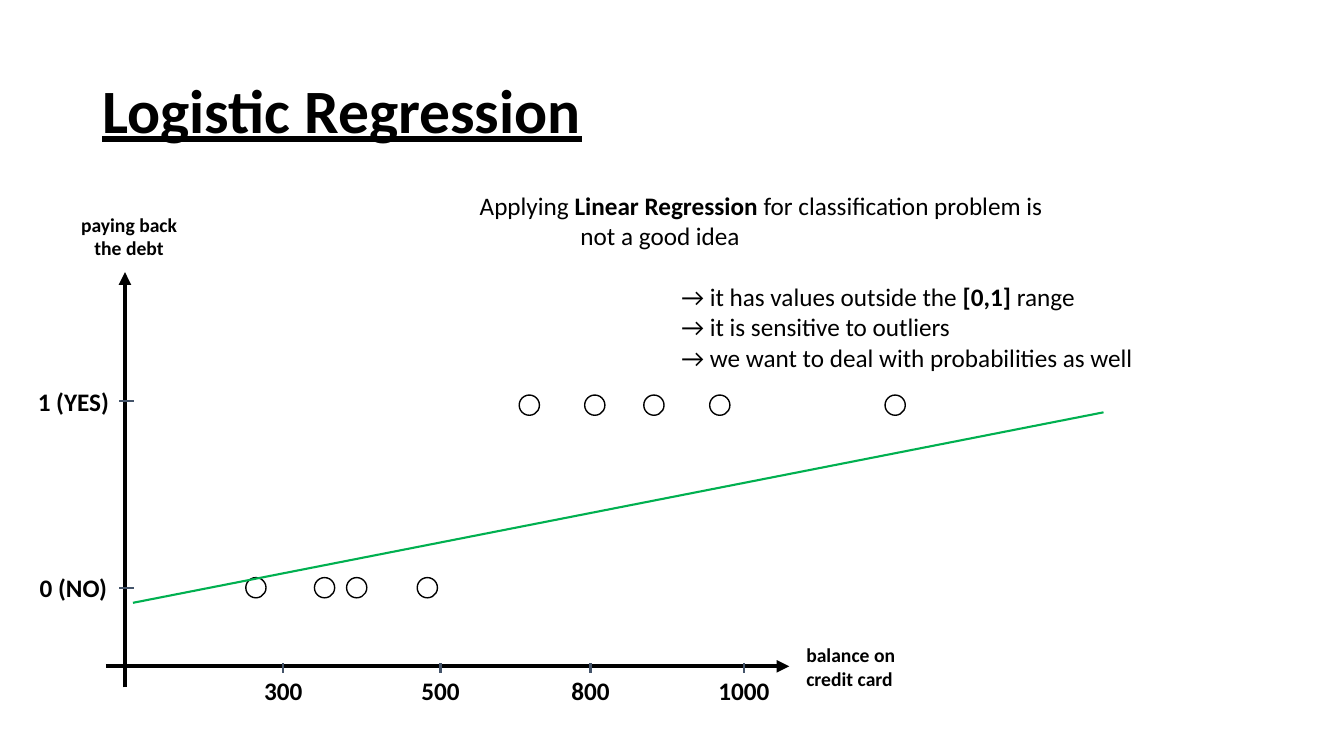
from lxml.etree import SubElement
from pptx import Presentation
from pptx.dml.color import RGBColor
from pptx.enum.shapes import MSO_CONNECTOR, MSO_SHAPE
from pptx.enum.text import MSO_ANCHOR, PP_ALIGN
from pptx.oxml.ns import qn
from pptx.util import Cm, Pt

COLORS = {"ink": "000000", "paper": "FFFFFF", "tick": "44546A", "fit": "00B050"}
FONT = "Calibri"

# All lengths are in centimetres.
TITLE = "Logistic Regression"
# Each note line: indent, space before in points, runs as (text, bold)
NOTES = [
    (0, 0, [("Applying ", False), ("Linear Regression ", True),
            ("for classification problem is", False)]),
    (2.54, 0, [("not a good idea", False)]),
    (5.08, 22, [("→ it has values outside the ", False), ("[0,1] ", True),
                ("range", False)]),
    (5.08, 0, [("→ it is sensitive to outliers", False)]),
    (5.08, 0, [("→ we want to deal with probabilities as well", False)]),
]
Y_AXIS_NAME = ["paying back", "the debt"]
X_AXIS_NAME = ["balance on", "credit card"]
Y_AXIS = (3.15, 17.32, 3.15, 6.86)
X_AXIS = (2.67, 16.79, 19.89, 16.79)
X_TICKS = [("300", 7.14), ("500", 11.1), ("800", 14.88), ("1000", 18.75)]
Y_TICKS = [("0 (NO)", 14.81), ("1 (YES)", 10.11)]
# Height of each class of points, then the centres along the balance axis
POINTS = [
    (14.81, [6.45, 8.18, 8.99, 10.77]),
    (10.21, [13.34, 14.99, 16.48, 18.14, 22.56]),
]
FIT_LINE = (3.35, 15.19, 27.81, 10.39)
POINT_SIZE = 0.51
LABEL_WIDTH, LABEL_HEIGHT = 2.34, 1.02

prs = Presentation()
prs.slide_width, prs.slide_height = Cm(33.87), Cm(19.05)
slide = prs.slides.add_slide(prs.slide_layouts[6])


def color(name):
    return RGBColor.from_string(COLORS[name])


def add_text(box, lines, size, align=PP_ALIGN.LEFT, wrap=False):
    """Add a text box; each line is (indent, space before, [(text, bold)])."""
    frame = slide.shapes.add_textbox(*map(Cm, box)).text_frame
    frame.word_wrap = wrap
    for i, (indent, before, runs) in enumerate(lines):
        paragraph = frame.add_paragraph() if i else frame.paragraphs[0]
        paragraph.alignment = align
        if indent:
            paragraph._p.get_or_add_pPr().set("marL", str(Cm(indent)))
        if before:
            paragraph.space_before = Pt(before)
        for text, bold in runs:
            run = paragraph.add_run()
            run.text = text
            run.font.name, run.font.size, run.font.bold = FONT, Pt(size), bold
            run.font.color.rgb = color("ink")
    return frame


def bold_lines(texts):
    return [(0, 0, [(text, True)]) for text in texts]


def add_line(ends, name, width, arrow=False):
    line = slide.shapes.add_connector(MSO_CONNECTOR.STRAIGHT, *map(Cm, ends))
    line.line.color.rgb = color(name)
    line.line.width = Pt(width)
    if arrow:
        SubElement(line.line._get_or_add_ln(), qn("a:tailEnd"), type="triangle")
    SubElement(line._element.spPr, qn("a:effectLst"))


def add_tick_label(text, x, y):
    box = (x - LABEL_WIDTH / 2, y - LABEL_HEIGHT / 2, LABEL_WIDTH, LABEL_HEIGHT)
    add_text(box, bold_lines([text]), 18, PP_ALIGN.CENTER)


def add_point(x, y):
    corner = (x - POINT_SIZE / 2, y - POINT_SIZE / 2)
    point = slide.shapes.add_shape(
        MSO_SHAPE.OVAL, *map(Cm, corner), Cm(POINT_SIZE), Cm(POINT_SIZE))
    point.shadow.inherit = False
    point.fill.solid()
    point.fill.fore_color.rgb = color("paper")
    point.line.color.rgb = color("ink")
    point.line.width = Pt(1)


title = add_text((2.33, 1.01, 29.21, 3.68), bold_lines([TITLE]), 44, wrap=True)
title.vertical_anchor = MSO_ANCHOR.MIDDLE
title.paragraphs[0].line_spacing = 0.9
title.paragraphs[0].runs[0].font.underline = True

for axis in (Y_AXIS, X_AXIS):
    add_line(axis, "ink", 3, arrow=True)
for text, x in X_TICKS:
    add_line((x, 16.71, x, 16.97), "tick", 1.5)
    add_tick_label(text, x, 17.4)
for text, y in Y_TICKS:
    add_line((3, y, 3.37, y), "tick", 1.5)
    add_tick_label(text, 1.85, y)
for y, centres in POINTS:
    for x in centres:
        add_point(x, y)
add_line(FIT_LINE, "fit", 1.5)

add_text((1.78, 5.23, 2.95, 1.45), bold_lines(Y_AXIS_NAME), 14, PP_ALIGN.CENTER)
add_text((20.07, 16.08, 2.77, 1.45), bold_lines(X_AXIS_NAME), 14)
add_text((11.84, 4.67, 17.22, 4.88), NOTES, 18, wrap=True)

prs.save("out.pptx")
